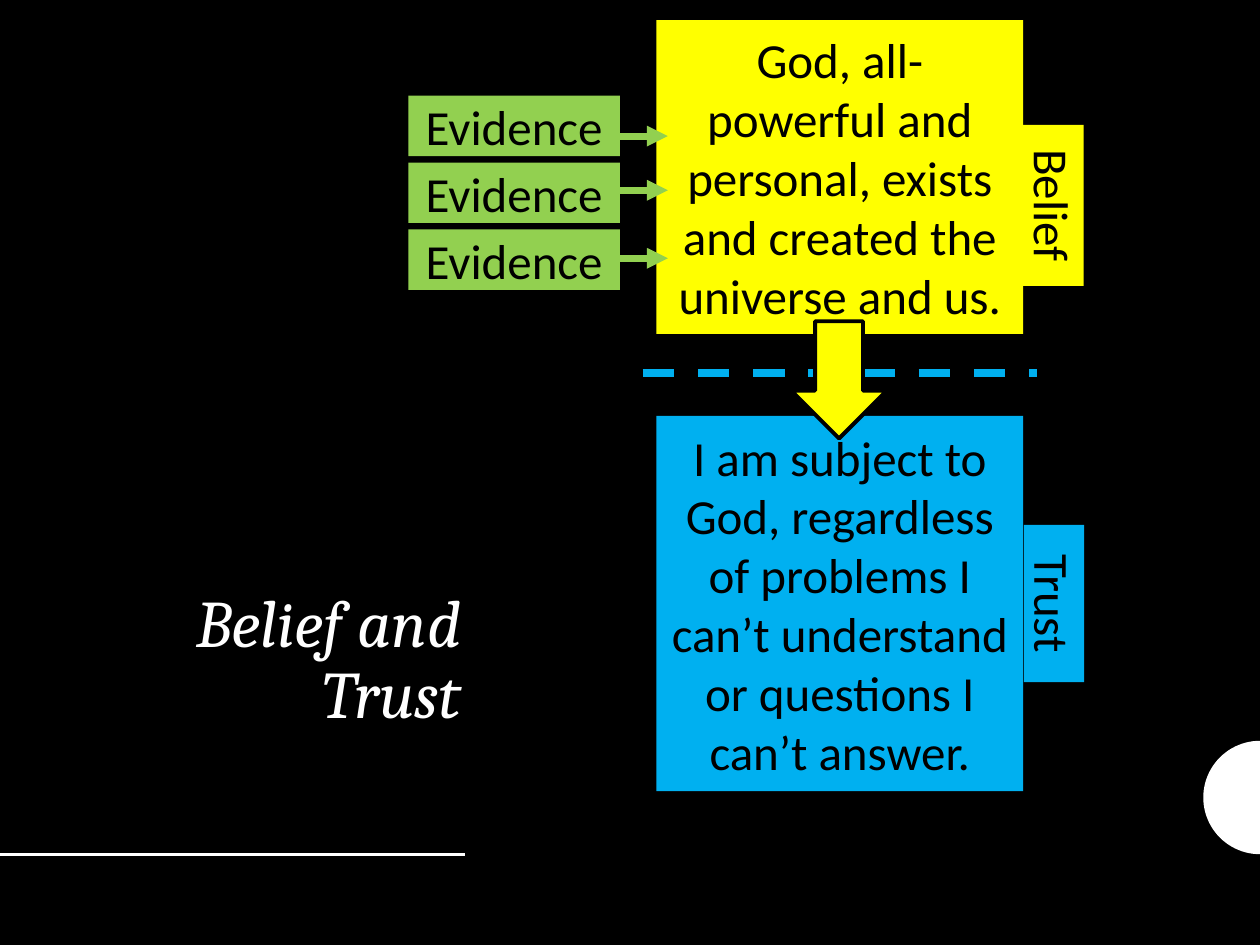
"""Build the Belief and Trust slide."""
import math

from lxml import etree
from pptx import Presentation
from pptx import util as u
from pptx.dml.color import RGBColor
from pptx.enum import dml, shapes, text
from pptx.oxml.ns import qn

BLACK, WHITE = "000000", "FFFFFF"
YELLOW, BLUE, GREEN = "FFFF00", "00B0F0", "92D050"


def paint(part, color):
    """Give a fill or font colour part a solid hex colour."""
    part.solid()
    part.fore_color.rgb = RGBColor.from_string(color)


def write(shape, words, size=28, font="Calibri", color=BLACK, italic=False,
          align=text.PP_ALIGN.CENTER, anchor=text.MSO_ANCHOR.MIDDLE, spacing=None):
    """Put one formatted paragraph into a shape."""
    frame = shape.text_frame
    frame.word_wrap = True
    frame.vertical_anchor = anchor
    paragraph = frame.paragraphs[0]
    paragraph.alignment = align
    paragraph.line_spacing = spacing
    run = paragraph.add_run()
    run.text = words
    run.font.size = u.Pt(size)
    run.font.name = font
    run.font.italic = italic
    paint(run.font.fill, color)


def add_block(slide, box, color, words=None, kind=shapes.MSO_SHAPE.RECTANGLE,
              outline=None, rotation=0):
    """Add a filled shape, with text when words are given."""
    block = slide.shapes.add_shape(kind, *map(u.Inches, box))
    block.shadow.inherit = False
    block.rotation = rotation
    paint(block.fill, color)
    if outline:
        paint(block.line.fill, outline)
        block.line.width = u.Pt(2.25)
    else:
        block.line.fill.background()
    if words:
        write(block, words)


def add_rule(slide, left, right, top, color, width, dash=None, arrow=False):
    """Add a horizontal line, optionally dashed or arrowed."""
    rule = slide.shapes.add_connector(
        shapes.MSO_CONNECTOR.STRAIGHT, *map(u.Inches, (left, top, right, top)))
    paint(rule.line.fill, color)
    rule.line.width = u.Pt(width)
    if dash:
        rule.line.dash_style = dash
    if arrow:
        etree.SubElement(rule.line._get_or_add_ln(), qn("a:tailEnd"), type="triangle")
    etree.SubElement(rule._element.spPr, qn("a:effectLst"))


def add_half_disc(slide, center_x, center_y, radius, color, steps=48):
    """Add the left half of a disc."""
    angles = [math.pi * (0.5 + step / steps) for step in range(steps + 1)]
    rim = [(u.Inches(center_x + radius * math.cos(angle)),
            u.Inches(center_y + radius * math.sin(angle))) for angle in angles]
    builder = slide.shapes.build_freeform(*rim[0])
    builder.add_line_segments(rim[1:], close=True)
    disc = builder.convert_to_shape()
    disc.shadow.inherit = False
    paint(disc.fill, color)
    disc.line.fill.background()


def add_title(slide, words):
    """Add the italic slide title."""
    title = slide.shapes.add_textbox(*map(u.Inches, (0.62, 4.63, 3.14, 1.39)))
    write(title, words, size=38, font="Cambria", color=WHITE, italic=True,
          align=text.PP_ALIGN.RIGHT, anchor=text.MSO_ANCHOR.TOP, spacing=0.9)


def main():
    """Build and save the slide."""
    deck = Presentation()
    deck.slide_width, deck.slide_height = u.Inches(10), u.Inches(7.5)
    slide = deck.slides.add_slide(deck.slide_layouts[6])
    paint(slide.background.fill, BLACK)

    add_half_disc(slide, 10, 6.33, 0.45, WHITE)
    add_rule(slide, 0, 3.69, 6.78, WHITE, 2)

    add_block(slide, (5.21, 0.16, 2.91, 2.49), YELLOW,
              "God, all-powerful and personal, exists and created the universe and us.")
    add_block(slide, (5.21, 3.3, 2.91, 2.98), BLUE,
              "I am subject to God, regardless of problems I can’t understand "
              "or questions I can’t answer.")
    add_rule(slide, 5.1, 8.23, 2.96, BLUE, 4.5, dash=dml.MSO_LINE.DASH)
    add_block(slide, (6.28, 2.55, 0.76, 0.93), YELLOW,
              kind=shapes.MSO_SHAPE.DOWN_ARROW, outline=BLACK)
    add_title(slide, "Belief and Trust")

    for row in range(3):
        add_block(slide, (3.24, 0.76 + 0.53 * row, 1.68, 0.48), GREEN, "Evidence")
    add_block(slide, (7.72, 1.39, 1.28, 0.48), YELLOW, "Belief", rotation=90)
    add_block(slide, (7.74, 4.55, 1.25, 0.48), BLUE, "Trust", rotation=90)
    for arrow_top in (1.08, 1.51, 2.05):
        add_rule(slide, 4.88, 5.3, arrow_top, GREEN, 4, arrow=True)

    deck.save("out.pptx")


if __name__ == "__main__":
    main()
